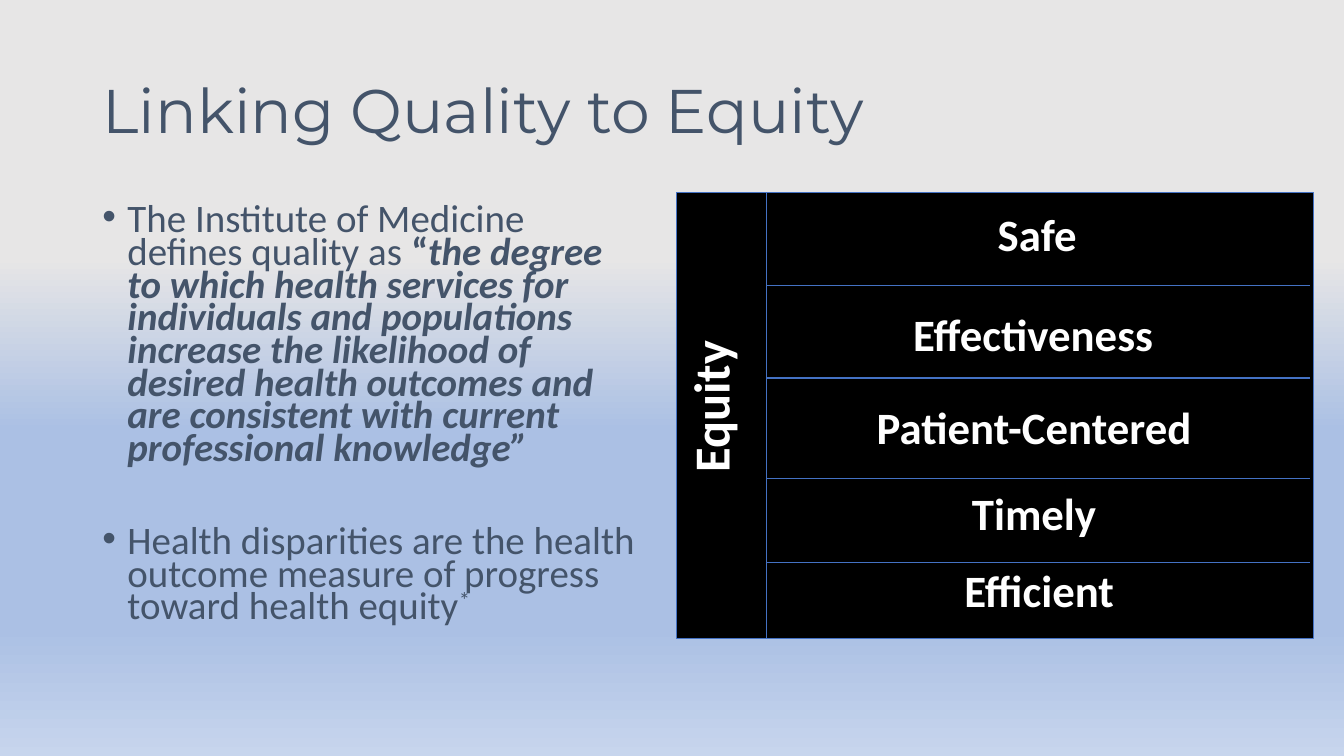
from lxml.etree import SubElement
from pptx import Presentation
from pptx.dml.color import RGBColor
from pptx.enum.shapes import MSO_CONNECTOR as Connector, MSO_SHAPE as Shape
from pptx.enum.text import MSO_ANCHOR as Anchor, MSO_AUTO_SIZE as AutoSize, PP_ALIGN as Align
from pptx.oxml.ns import qn
from pptx.util import Pt

SLATE, BLUE, BLACK, WHITE = "44546A", "4472C4", "000000", "FFFFFF"
BACKGROUND_STOPS = [(34, "E7E6E6"), (57, "ABC0E4"), (83, "ABC0E4"), (100, "C7D5ED")]

# Each bullet: space before, then runs of (text, bold, italic, superscript)
BULLETS = [
    (10, [
        ("The Institute of Medicine defines quality as ", False, False, False),
        ("“", True, False, False),
        ("the degree to which health services for individuals and populations "
         "increase the likelihood of desired health outcomes and are consistent "
         "with current professional knowledge”", True, True, False),
    ]),
    (43, [
        ("Health disparities are the health outcome measure of progress "
         "toward health equity", False, False, False),
        ("*", False, False, True),
    ]),
]

# Each dimension: text, left and top offset of its label within the panel
DIMENSIONS = [
    ("Safe", 98.7, 6.5),
    ("Effectiveness", 95.8, 77.8),
    ("Patient-Centered", 96.5, 144.7),
    ("Timely", 96.5, 206),
    ("Efficient", 100.1, 260.7),
]
DIVIDERS = [66.3, 132.5, 204.5, 264.3]


def color(value):
    return RGBColor.from_string(value)


def style_font(paragraph, size, value, name="Calibri", bold=None):
    font = paragraph.font
    font.name, font.size, font.bold = name, Pt(size), bold
    font.color.rgb = color(value)


def add_background(slide):
    fill = slide.background.fill
    fill.gradient()
    fill.gradient_angle = 270  # counter-clockwise, so the colours run downwards
    stops = slide.background._cSld.find(".//" + qn("a:gsLst"))
    for stop in list(stops):
        stops.remove(stop)
    for position, value in BACKGROUND_STOPS:
        stop = SubElement(stops, qn("a:gs"), pos=str(position * 1000))
        SubElement(stop, qn("a:srgbClr"), val=value)


def add_title(slide, left, top, width, height):
    title = slide.shapes.title
    title.left, title.top, title.width, title.height = map(Pt, (left, top, width, height))
    frame = title.text_frame
    frame.text = "Linking Quality to Equity"
    frame.auto_size, frame.vertical_anchor = AutoSize.NONE, Anchor.MIDDLE
    heading = frame.paragraphs[0]
    heading.alignment, heading.line_spacing = Align.LEFT, 0.9
    style_font(heading, 44, SLATE, "Montserrat")


def add_definition(slide, left, top, width, height):
    frame = slide.shapes.add_textbox(*map(Pt, (left, top, width, height))).text_frame
    frame.word_wrap = True
    for index, (space, runs) in enumerate(BULLETS):
        bullet = frame.add_paragraph() if index else frame.paragraphs[0]
        bullet.line_spacing, bullet.space_before = 0.7, Pt(space)
        style_font(bullet, 27.8, SLATE)
        # Hanging bullet
        props = bullet._p.get_or_add_pPr()
        props.set("marL", str(Pt(18)))
        props.set("indent", str(Pt(-18)))
        marker_font = SubElement(props, qn("a:buFont"), typeface="Arial")
        marker = SubElement(props, qn("a:buChar"), char="•")
        props.find(qn("a:defRPr")).addprevious(marker_font)
        marker_font.addnext(marker)
        for text, bold, italic, superscript in runs:
            run = bullet.add_run()
            run.text = text
            font = run.font
            font.name, font.size = "Calibri", Pt(27.8)
            font.color.rgb = color(SLATE)
            font.bold, font.italic = bold, italic
            if superscript:
                run._r.get_or_add_rPr().set("baseline", "30000")


def add_block(slide, left, top, width, height):
    block = slide.shapes.add_shape(Shape.RECTANGLE, *map(Pt, (left, top, width, height)))
    block.shadow.inherit = False
    block.fill.solid()
    block.fill.fore_color.rgb = color(BLACK)
    block.line.color.rgb = color(BLUE)
    block.line.width = Pt(0.5)


def add_divider(slide, left, right, y):
    divider = slide.shapes.add_connector(Connector.STRAIGHT, *map(Pt, (left, y, right, y)))
    divider.line.color.rgb = color(BLUE)
    divider.line.width = Pt(1)
    SubElement(divider._element.spPr, qn("a:effectLst"))


def add_label(slide, text, size, left, top, width, height):
    frame = slide.shapes.add_textbox(*map(Pt, (left, top, width, height))).text_frame
    frame.word_wrap = True
    frame.text = text
    label = frame.paragraphs[0]
    label.alignment = Align.CENTER
    style_font(label, size, WHITE, bold=True)
    return frame


def add_equity_panel(slide, left, top, width, height):
    equity_width = 64.4
    # Quality dimensions
    add_block(slide, left + equity_width, top, width - equity_width, height)
    for offset in DIVIDERS:
        add_divider(slide, left + 62.7, left + width - 2.1, top + offset)
    for text, x, y in DIMENSIONS:
        add_label(slide, text, 32, left + x, top + y, 318.2, 46)
    # Equity column across all dimensions
    add_block(slide, left, top, equity_width, height)
    equity = add_label(slide, "Equity", 36, left - 1.4, top + 2.9, 58.3, 300.2)
    equity._txBody.bodyPr.set("vert", "vert270")


def main():
    deck = Presentation()
    deck.slide_width, deck.slide_height = Pt(960), Pt(540)
    slide = deck.slides.add_slide(deck.slide_layouts[5])
    add_background(slide)
    add_title(slide, 66, 28.8, 828, 104.4)
    add_definition(slide, 66, 144, 396, 342.7)
    add_equity_panel(slide, 483.1, 137.5, 455, 318.2)
    deck.save("out.pptx")


if __name__ == "__main__":
    main()
